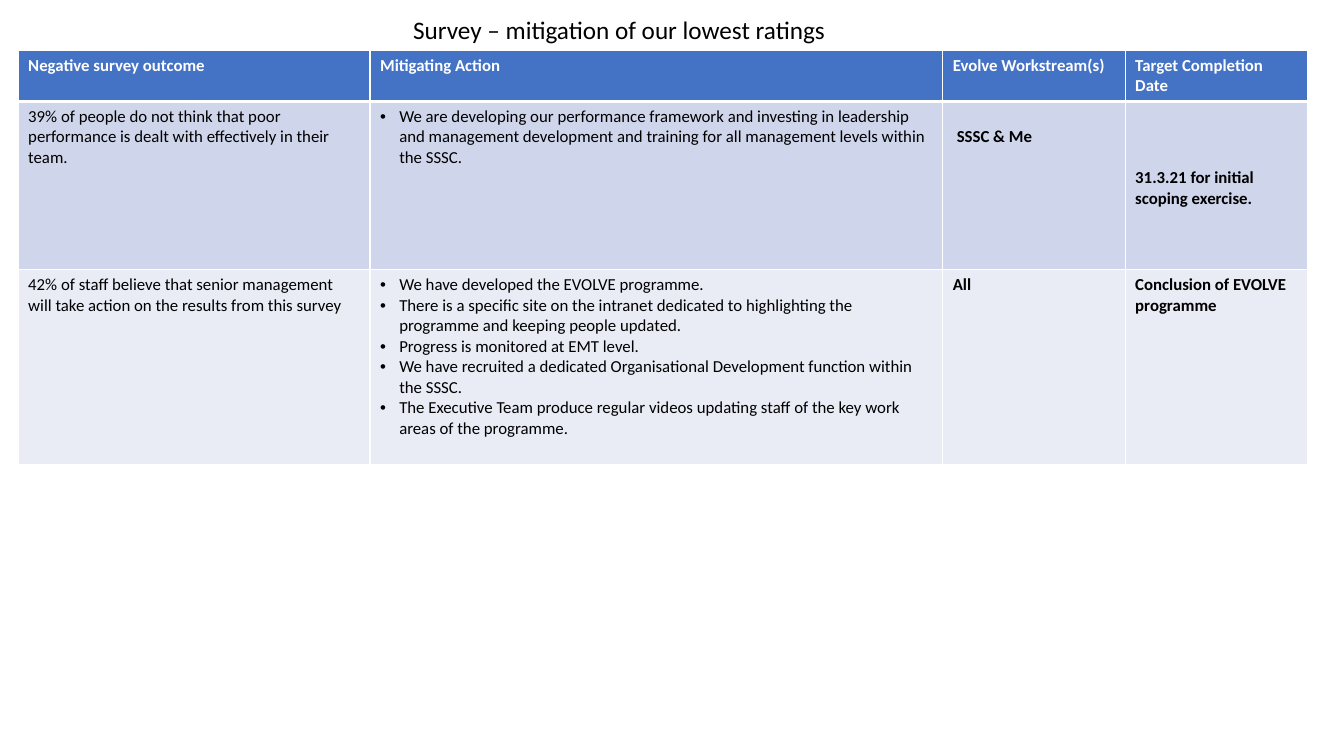
from lxml import etree
from pptx import Presentation
from pptx.dml.color import RGBColor
from pptx.oxml.ns import qn
from pptx.util import Inches, Pt

SLIDE_W, SLIDE_H = 13.33, 7.5
FONT = "Calibri"
WHITE, BLACK, HEADER_BLUE = "FFFFFF", "000000", "4472C4"
BAND_FILLS = ("CFD5EA", "E9EBF5")
LINE = 0.203  # height of one 12 pt line
INDENT = Inches(0.19)
COLUMNS = (3.49, 5.68, 1.81, 1.81)
ROWS = (0.5, 1.67, 1.93)

HEADINGS = ("Negative survey outcome", "Mitigating Action",
            "Evolve Workstream(s)", "Target Completion Date")
# Outcome, actions, workstream, target date
OUTCOMES = (
    ("39% of people do not think that poor performance is dealt with "
     "effectively in their team.",
     ("We are developing our performance framework and investing in leadership "
      "and management development and training for all management levels within "
      "the SSSC.",),
     "SSSC & Me", "31.3.21 for initial scoping exercise."),
    ("42% of staff believe that senior management will take action on the "
     "results from this survey",
     ("We have developed the EVOLVE programme.",
      "There is a specific site on the intranet dedicated to highlighting the "
      "programme and keeping people updated.",
      "Progress is monitored at EMT level.",
      "We have recruited a dedicated Organisational Development function within "
      "the SSSC.",
      "The Executive Team produce regular videos updating staff of the key work "
      "areas of the programme."),
     "All", "Conclusion of EVOLVE programme"),
)


def rgb(colour):
    return RGBColor.from_string(colour)


def style_text(frame, size, colour, bold=False):
    for paragraph in frame.paragraphs:
        for run in paragraph.runs:
            run.font.name = FONT
            run.font.size = Pt(size)
            run.font.bold = bold
            run.font.color.rgb = rgb(colour)


def add_bullet(paragraph):
    props = paragraph._p.get_or_add_pPr()
    props.set("marL", str(INDENT))
    props.set("indent", str(-INDENT))
    etree.SubElement(props, qn("a:buFont"), typeface="Arial")
    etree.SubElement(props, qn("a:buChar"), char="•")


def add_borders(cell, bottom=1):
    props = cell._tc.get_or_add_tcPr()
    for side, width in (("L", 1), ("R", 1), ("T", 1), ("B", bottom)):
        border = etree.SubElement(props, qn(f"a:ln{side}"), w=str(Pt(width)))
        fill = etree.SubElement(border, qn("a:solidFill"))
        etree.SubElement(fill, qn("a:srgbClr"), val=WHITE)


def fill_cell(cell, text, fill, colour=BLACK, bold=False, bottom=1):
    add_borders(cell, bottom)
    cell.fill.solid()
    cell.fill.fore_color.rgb = rgb(fill)
    cell.text_frame.text = text
    style_text(cell.text_frame, 12, colour, bold)


def add_title(slide, text):
    box = slide.shapes.add_textbox(
        Inches(SLIDE_W * 0.3), Inches(SLIDE_H * 0.012),
        Inches(4.34), Inches(0.4))
    box.text_frame.word_wrap = False
    box.text_frame.text = text
    style_text(box.text_frame, 18, BLACK)


def add_survey_table(slide):
    table = slide.shapes.add_table(
        len(ROWS), len(COLUMNS), Inches(0.18), Inches(0.5),
        Inches(sum(COLUMNS)), Inches(sum(ROWS))).table
    for column, width in zip(table.columns, COLUMNS):
        column.width = Inches(width)
    for row, height in zip(table.rows, ROWS):
        row.height = Inches(height)

    # Header row
    for index, heading in enumerate(HEADINGS):
        fill_cell(table.cell(0, index), heading, HEADER_BLUE, WHITE, True, 3)

    # One row per survey outcome
    for row, (entry, fill) in enumerate(zip(OUTCOMES, BAND_FILLS), 1):
        outcome, actions, workstream, target = entry
        texts = (outcome, "\n".join(actions), workstream, target)
        for index, text in enumerate(texts):
            fill_cell(table.cell(row, index), text, fill, bold=index > 1)
        for paragraph in table.cell(row, 1).text_frame.paragraphs:
            add_bullet(paragraph)

    # The first outcome's workstream and date sit lower in their cells
    workstream, target = table.cell(1, 2), table.cell(1, 3)
    workstream.margin_left = Inches(0.14)
    workstream.margin_top = Inches(0.05 + LINE)
    target.margin_top = Inches(0.05 + 3 * LINE)


def main():
    deck = Presentation()
    deck.slide_width, deck.slide_height = Inches(SLIDE_W), Inches(SLIDE_H)
    slide = deck.slides.add_slide(deck.slide_layouts[6])
    add_survey_table(slide)
    add_title(slide, "Survey – mitigation of our lowest ratings")
    deck.save("out.pptx")


if __name__ == "__main__":
    main()
